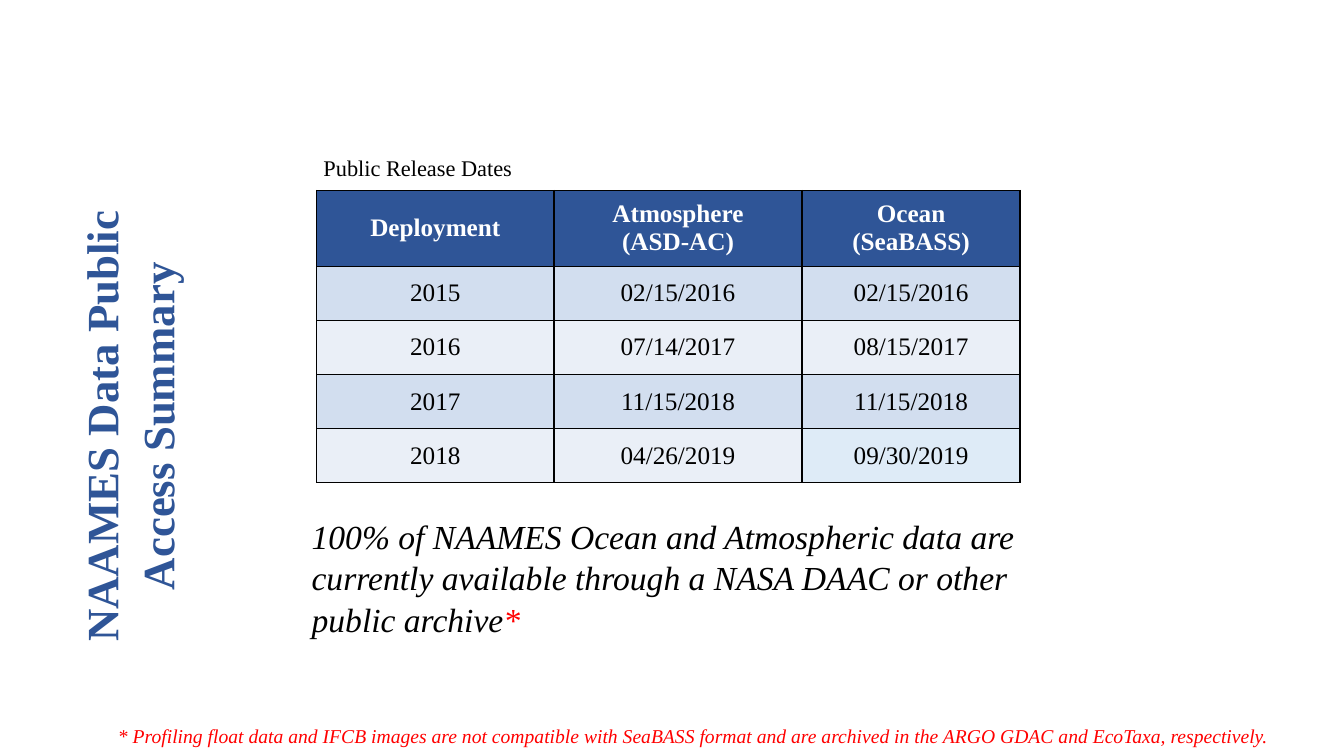
from pptx import Presentation
from pptx.dml.color import RGBColor
from pptx.enum.text import MSO_ANCHOR, PP_ALIGN
from pptx.oxml.ns import qn
from pptx.util import Pt
from lxml import etree

LEFT, CENTER = PP_ALIGN.LEFT, PP_ALIGN.CENTER
MIDDLE = MSO_ANCHOR.MIDDLE

TITLE = "NAAMES Data Public Access Summary"
CAPTION = "Public Release Dates"
RELEASE_DATES = [
    ("Deployment", "Atmosphere\n(ASD-AC)", "Ocean\n(SeaBASS)"),
    ("2015", "02/15/2016", "02/15/2016"),
    ("2016", "07/14/2017", "08/15/2017"),
    ("2017", "11/15/2018", "11/15/2018"),
    ("2018", "04/26/2019", "09/30/2019"),
]
SUMMARY = (
    "100% of NAAMES Ocean and Atmospheric data are currently available "
    "through a NASA DAAC or other public archive"
)
FOOTNOTE = (
    "* Profiling float data and IFCB images are not compatible with SeaBASS format "
    "and are archived in the ARGO GDAC and EcoTaxa, respectively."
)

THEME = {
    "font": "Times New Roman",
    "blue": "2F5597", "white": "FFFFFF", "black": "000000", "red": "FF0000",
    "bands": ("D2DEEF", "EAEFF7"), "last_cell": "DEEBF7",
    "title": 32, "summary": 24, "table": 18, "caption": 16, "footnote": 14,
}

TABLE_LEFT, TABLE_TOP = 226.2, 136.1
COLUMN_WIDTHS = (169.5, 177.25, 155.75)
HEADER_HEIGHT, ROW_HEIGHT = 54, 38.7


def style(paragraph, size, color, align=LEFT, bold=False, italic=False):
    paragraph.alignment = align
    font = paragraph.font
    font.name, font.size = THEME["font"], Pt(size)
    font.bold, font.italic = bold, italic
    font.color.rgb = RGBColor.from_string(color)


def add_text(slide, box, text, size, color, **options):
    shape = slide.shapes.add_textbox(*map(Pt, box))
    shape.text_frame.word_wrap = True
    paragraph = shape.text_frame.paragraphs[0]
    paragraph.add_run().text = text
    style(paragraph, size, color, **options)
    return shape


def add_borders(cell):
    """Draw a thin black line on each side, placed before the cell fill."""
    properties = cell._tc.get_or_add_tcPr()
    for position, side in enumerate(("a:lnL", "a:lnR", "a:lnT", "a:lnB")):
        line = etree.Element(qn(side), w=str(Pt(1)))
        fill = etree.SubElement(line, qn("a:solidFill"))
        etree.SubElement(fill, qn("a:srgbClr"), val=THEME["black"])
        properties.insert(position, line)


def cell_fill(row, column):
    if row == 0:
        return THEME["blue"]
    if (row, column) == (len(RELEASE_DATES) - 1, len(COLUMN_WIDTHS) - 1):
        return THEME["last_cell"]
    return THEME["bands"][(row - 1) % 2]


def add_release_table(slide):
    row_heights = [HEADER_HEIGHT] + [ROW_HEIGHT] * (len(RELEASE_DATES) - 1)
    table = slide.shapes.add_table(
        len(row_heights), len(COLUMN_WIDTHS), Pt(TABLE_LEFT), Pt(TABLE_TOP),
        Pt(sum(COLUMN_WIDTHS)), Pt(sum(row_heights)),
    ).table
    for column, width in zip(table.columns, COLUMN_WIDTHS):
        column.width = Pt(width)
    for row, height in enumerate(row_heights):
        table.rows[row].height = Pt(height)
        is_header = row == 0
        color = THEME["white"] if is_header else THEME["black"]
        for column, text in enumerate(RELEASE_DATES[row]):
            cell = table.cell(row, column)
            cell.vertical_anchor = MIDDLE
            cell.fill.solid()
            cell.fill.fore_color.rgb = RGBColor.from_string(cell_fill(row, column))
            add_borders(cell)
            cell.text_frame.text = text
            for paragraph in cell.text_frame.paragraphs:
                style(paragraph, THEME["table"], color, CENTER, bold=is_header)


def main():
    presentation = Presentation()
    presentation.slide_width, presentation.slide_height = Pt(960), Pt(540)
    slide = presentation.slides.add_slide(presentation.slide_layouts[6])

    add_release_table(slide)
    add_text(slide, (224, 106.5, 294, 26.6), CAPTION, THEME["caption"], THEME["black"])
    title = add_text(slide, (-108, 262, 396, 85), TITLE, THEME["title"],
                     THEME["blue"], align=CENTER, bold=True)
    title.rotation = 270
    summary = add_text(slide, (215.5, 363.5, 574.5, 94.5), SUMMARY,
                       THEME["summary"], THEME["black"], italic=True)
    for shape in (title, summary):
        shape.text_frame.paragraphs[0].line_spacing = 1.04
    asterisk = summary.text_frame.paragraphs[0].add_run()
    asterisk.text = "*"
    asterisk.font.color.rgb = RGBColor.from_string(THEME["red"])
    add_text(slide, (77.2, 513.2, 850.3, 24.5), FOOTNOTE, THEME["footnote"],
             THEME["red"], italic=True)

    presentation.save("out.pptx")


if __name__ == "__main__":
    main()
